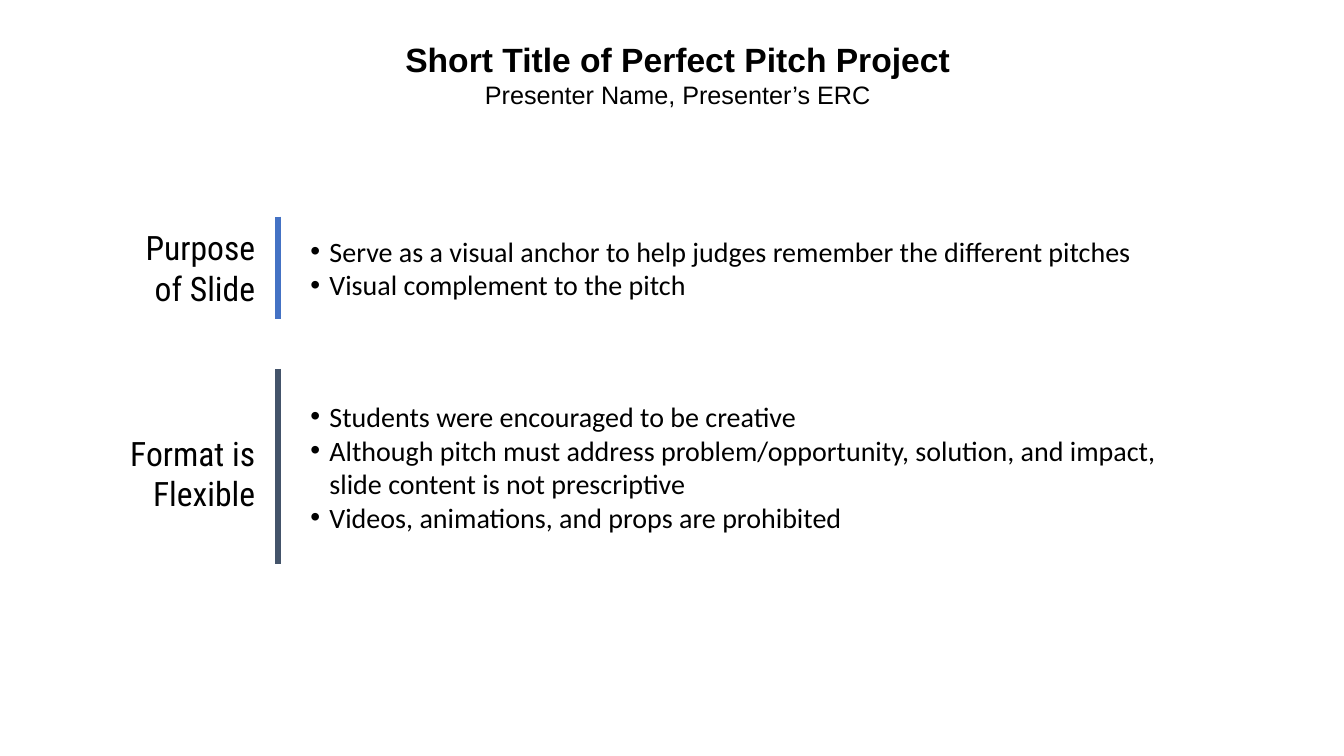
import lxml.etree
import pptx
import pptx.dml.color
import pptx.enum.shapes
import pptx.enum.text
import pptx.oxml.ns
import pptx.util

WIDTH, HEIGHT = pptx.util.Inches(13.33), pptx.util.Inches(7.5)
COLUMN, ROW = WIDTH / 40, HEIGHT / 30
COLORS = {"text": "000000", "purpose": "4472C4", "format": "44546A"}
ALIGN = pptx.enum.text.PP_ALIGN
FORMATS = {
    "title": {"name": "Arial", "size": pptx.util.Pt(24), "bold": True},
    "presenter": {"name": "Arial", "size": pptx.util.Pt(18), "bold": False},
    "label": {"name": "Roboto Condensed", "size": pptx.util.Pt(24)},
    "bullet": {"name": "Calibri", "size": pptx.util.Pt(20)},
}
ALIGNMENTS = {"title": ALIGN.CENTER, "presenter": ALIGN.CENTER,
              "label": ALIGN.RIGHT, "bullet": ALIGN.LEFT}
SECTIONS = [
    {"box": (3.3, 8.6, 32.85, 4.04), "color": "purpose", "label": "Purpose of Slide",
     "label_drop": 0,
     "points": ["Serve as a visual anchor to help judges remember the different pitches",
                "Visual complement to the pitch"]},
    {"box": (3.3, 14.64, 32.85, 7.76), "color": "format", "label": "Format is Flexible",
     "label_drop": 0.24,
     "points": ["Students were encouraged to be creative",
                "Although pitch must address problem/opportunity, solution, and impact, "
                "slide content is not prescriptive",
                "Videos, animations, and props are prohibited"]},
]


def rgb(name):
    """Return the named colour."""
    return pptx.dml.color.RGBColor.from_string(COLORS[name])


def grid(column, row):
    """Turn grid columns and rows into slide lengths."""
    return round(column * COLUMN), round(row * ROW)


def add_bullet(paragraph):
    """Give a paragraph a hanging round bullet."""
    properties = paragraph._p.get_or_add_pPr()
    indent = pptx.util.Inches(0.19)
    properties.set("marL", str(indent))
    properties.set("indent", str(-indent))
    for tag, attribute, value in (("a:buFont", "typeface", "Arial"), ("a:buChar", "char", "•")):
        element = lxml.etree.SubElement(properties, pptx.oxml.ns.qn(tag))
        element.set(attribute, value)


def add_text(slide, box, lines):
    """Write (text, style) lines, centred vertically in a grid box."""
    left, top, width, height = box
    shape = slide.shapes.add_textbox(*grid(left, top), *grid(width, height))
    frame = shape.text_frame
    frame.word_wrap = True
    frame.vertical_anchor = pptx.enum.text.MSO_ANCHOR.MIDDLE
    for index, (text, style) in enumerate(lines):
        paragraph = frame.add_paragraph() if index else frame.paragraphs[0]
        paragraph.alignment = ALIGNMENTS[style]
        if style == "bullet":
            add_bullet(paragraph)
        run = paragraph.add_run()
        run.text = text
        for name, value in FORMATS[style].items():
            setattr(run.font, name, value)
        run.font.color.rgb = rgb("text")


def add_section(slide, box, color, label, label_drop, points):
    """Place a label, a vertical rule and bullet points side by side."""
    left, top, width, height = box
    label_width, rule_offset, points_offset = 4.59, 4.98, 5.64
    add_text(slide, (left, top + label_drop, label_width, height), [(label, "label")])
    rule = slide.shapes.add_connector(
        pptx.enum.shapes.MSO_CONNECTOR.STRAIGHT,
        *grid(left + rule_offset, top), *grid(left + rule_offset, top + height))
    rule.line.color.rgb = rgb(color)
    rule.line.width = pptx.util.Pt(4.5)
    lxml.etree.SubElement(rule._element.spPr, pptx.oxml.ns.qn("a:effectLst"))
    add_text(slide, (left + points_offset, top, width - points_offset, height),
             [(point, "bullet") for point in points])


def main():
    """Build and save the slide."""
    presentation = pptx.Presentation()
    presentation.slide_width, presentation.slide_height = WIDTH, HEIGHT
    slide = presentation.slides.add_slide(presentation.slide_layouts[6])
    add_text(slide, (7.17, 0.8, 26, 4.32),
             [("Short Title of Perfect Pitch Project", "title"),
              ("Presenter Name, Presenter’s ERC", "presenter")])
    for section in SECTIONS:
        add_section(slide, **section)
    presentation.save("out.pptx")


if __name__ == "__main__":
    main()
